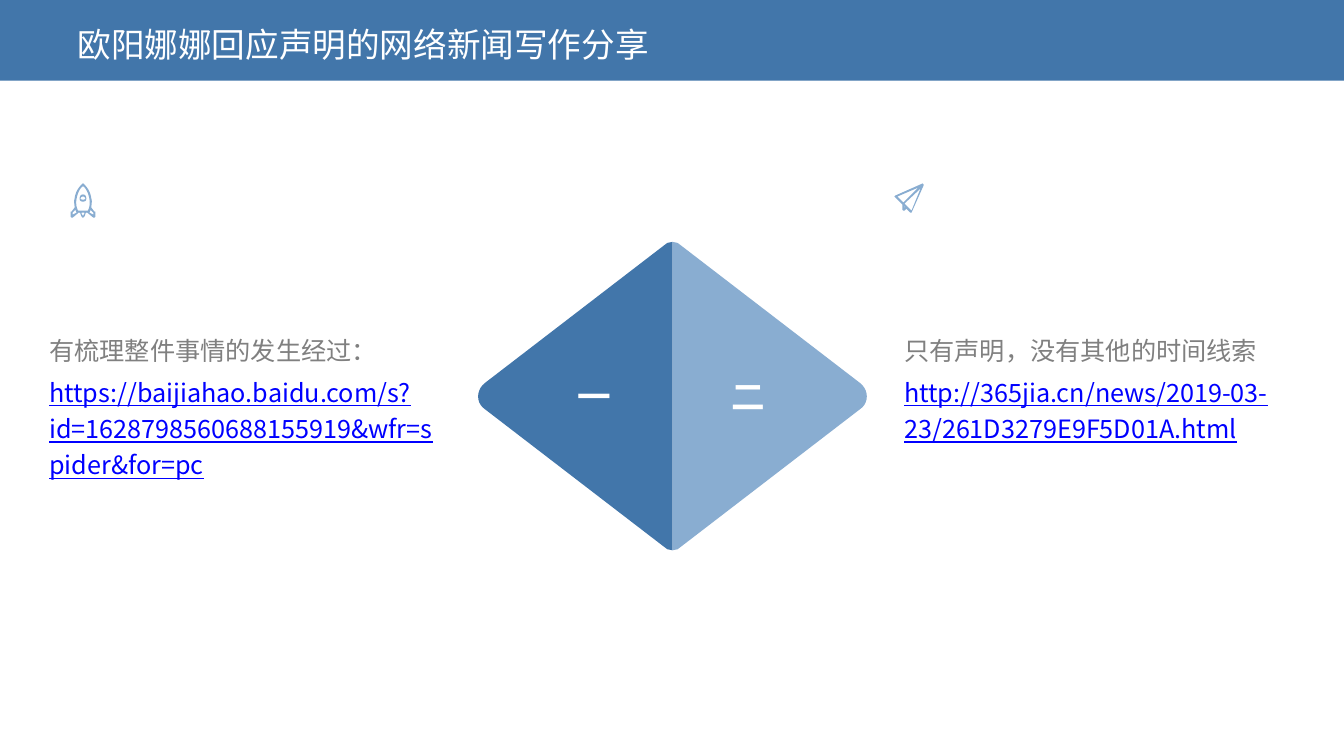
from dataclasses import dataclass

from lxml import etree
from pptx import Presentation
from pptx.dml.color import RGBColor
from pptx.enum import shapes, text
from pptx.oxml import ns
from pptx.util import Pt

PX = 9144  # one px is a hundredth of an inch


@dataclass(frozen=True)
class Theme:
    font: str = "Noto Sans CJK JP"
    dark: str = "4276AA"
    light: str = "89ADD1"
    white: str = "FFFFFF"
    grey: str = "808080"
    link: str = "0000FF"
    heading: int = 24
    body: int = 18


THEME = Theme()


def paint(shape, color):
    shape.fill.solid()
    shape.fill.fore_color.rgb = RGBColor.from_string(color)
    shape.line.fill.background()
    shape.shadow.inherit = False


def flatten(steps, samples=10):
    """Turn points and cubic curves (six numbers each) into plain points."""
    points = []
    for step in steps:
        if len(step) == 2:
            points.append(step)
            continue
        corners = [points[-1], step[0:2], step[2:4], step[4:6]]
        for index in range(1, samples + 1):
            t = index / samples
            weights = ((1 - t) ** 3, 3 * t * (1 - t) ** 2, 3 * t * t * (1 - t), t ** 3)
            points.append(tuple(
                sum(w * corner[axis] for w, corner in zip(weights, corners))
                for axis in (0, 1)))
    return points


def mirror(points, axis):
    return [(2 * axis - x, y) for x, y in points]


def symmetric(steps, axis):
    """Close a half outline with its reflection."""
    half = flatten(steps)
    return half + mirror(half, axis)[::-1]


def add_outline(page, contours, color):
    scaled = [[(x * PX, y * PX) for x, y in contour] for contour in contours]
    builder = page.shapes.build_freeform(*scaled[0][0], scale=1.0)
    for number, contour in enumerate(scaled):
        if number:
            builder.move_to(*contour[0])
        builder.add_line_segments(contour[1:], close=True)
    paint(builder.convert_to_shape(), color)


def add_text(page, area, paragraphs, size=THEME.body, bold=None, wrap=True,
             align=None, line_spacing=None, gap=0):
    """Write (wording, colour, underline) paragraphs in a box."""
    box = page.shapes.add_textbox(*(length * PX for length in area))
    frame = box.text_frame
    frame.word_wrap = wrap
    frame.auto_size = text.MSO_AUTO_SIZE.SHAPE_TO_FIT_TEXT
    for number, (wording, color, underline) in enumerate(paragraphs):
        para = frame.add_paragraph() if number else frame.paragraphs[0]
        para.alignment = align
        para.line_spacing = line_spacing
        if number and gap:
            para.space_before = Pt(gap)
        span = para.add_run()
        span.text = wording
        font = span.font
        font.size, font.bold, font.underline = Pt(size), bold, underline
        font.color.rgb = RGBColor.from_string(color)
        font.name = THEME.font
        east_asian = etree.SubElement(span._r.get_or_add_rPr(), ns.qn("a:ea"))
        east_asian.set("typeface", THEME.font)


def add_diamond(page):
    axis = 667
    right = flatten([
        (axis, 240), (672, 241), (676, 244), (853, 380),
        (862, 387, 862, 400, 853, 406), (676, 542), (672, 545), (axis, 546)])
    add_outline(page, [right], THEME.light)
    add_outline(page, [mirror(right, axis)], THEME.dark)
    for left, numeral in ((716, "二"), (563, "一")):
        add_text(page, (left, 368, 53, 50), [(numeral, THEME.white, None)],
                 size=THEME.heading, bold=True, wrap=False,
                 align=text.PP_ALIGN.CENTER)


def add_title_bar(page):
    bar = page.shapes.add_shape(shapes.MSO_SHAPE.RECTANGLE, 0, 0, 1335 * PX, 80 * PX)
    paint(bar, THEME.dark)
    add_text(page, (67, 7, 614, 62),
             [("欧阳娜娜回应声明的网络新闻写作分享", THEME.white, None)],
             size=THEME.heading, line_spacing=1.3)


def add_source_note(page, left, height, remark, address):
    add_text(page, (left, 322, 406, height),
             [(remark, THEME.grey, None), (address, THEME.link, True)],
             line_spacing=1.2, gap=3.6)


def add_paper_plane(page):
    outline = [(916, 184), (916, 183), (915, 182), (888, 194), (887, 195),
               (895, 203), (895, 208), (896, 209), (897, 209), (899, 207),
               (903, 211), (904, 211)]
    upper_wing = [(911, 186), (896, 201), (890, 195)]
    fold = [(897, 206), (897, 205), (898, 205)]
    lower_wing = [(904, 209), (897, 202), (913, 187)]
    add_outline(page, [outline, upper_wing, fold, lower_wing], THEME.light)


def add_rocket(page):
    axis = 82.3
    halves = (
        [(82, 182), (79, 185, 75, 189, 74, 197), (73, 200, 74, 203, 74, 206),
         (71, 210), (70, 210), (70, 215), (71, 216), (72, 216), (78, 211),
         (79, 211), (80, 212), (80, 214, 81, 215, 82, 216)],
        [(82, 185), (80, 186, 77, 191, 76, 197), (75, 202, 76, 206, 77, 208),
         (77, 209, 78, 209, 78, 209)],
        [(82, 193), (80, 193, 79, 195, 79, 197), (79, 199, 80, 200, 82, 200)],
        [(82, 195), (81, 195, 80, 196, 80, 197), (80, 198, 81, 198, 82, 198)],
        [(81, 211), (81, 212), (81, 213, 82, 213, 82, 214)],
    )
    fin = [(75, 208), (75, 209), (76, 211), (72, 213), (72, 211)]
    contours = [symmetric(half, axis) for half in halves]
    add_outline(page, contours + [fin, mirror(fin, axis)], THEME.light)


def main():
    deck = Presentation()
    deck.slide_width, deck.slide_height = 1333 * PX, 750 * PX
    page = deck.slides.add_slide(deck.slide_layouts[6])
    add_diamond(page)
    add_title_bar(page)
    add_source_note(
        page, 39, 161, "有梳理整件事情的发生经过：",
        "https://baijiahao.baidu.com/s?id=1628798560688155919&wfr=spider&for=pc")
    add_source_note(
        page, 887, 125, "只有声明，没有其他的时间线索",
        "http://365jia.cn/news/2019-03-23/261D3279E9F5D01A.html")
    add_paper_plane(page)
    add_rocket(page)
    deck.save("out.pptx")


if __name__ == "__main__":
    main()
